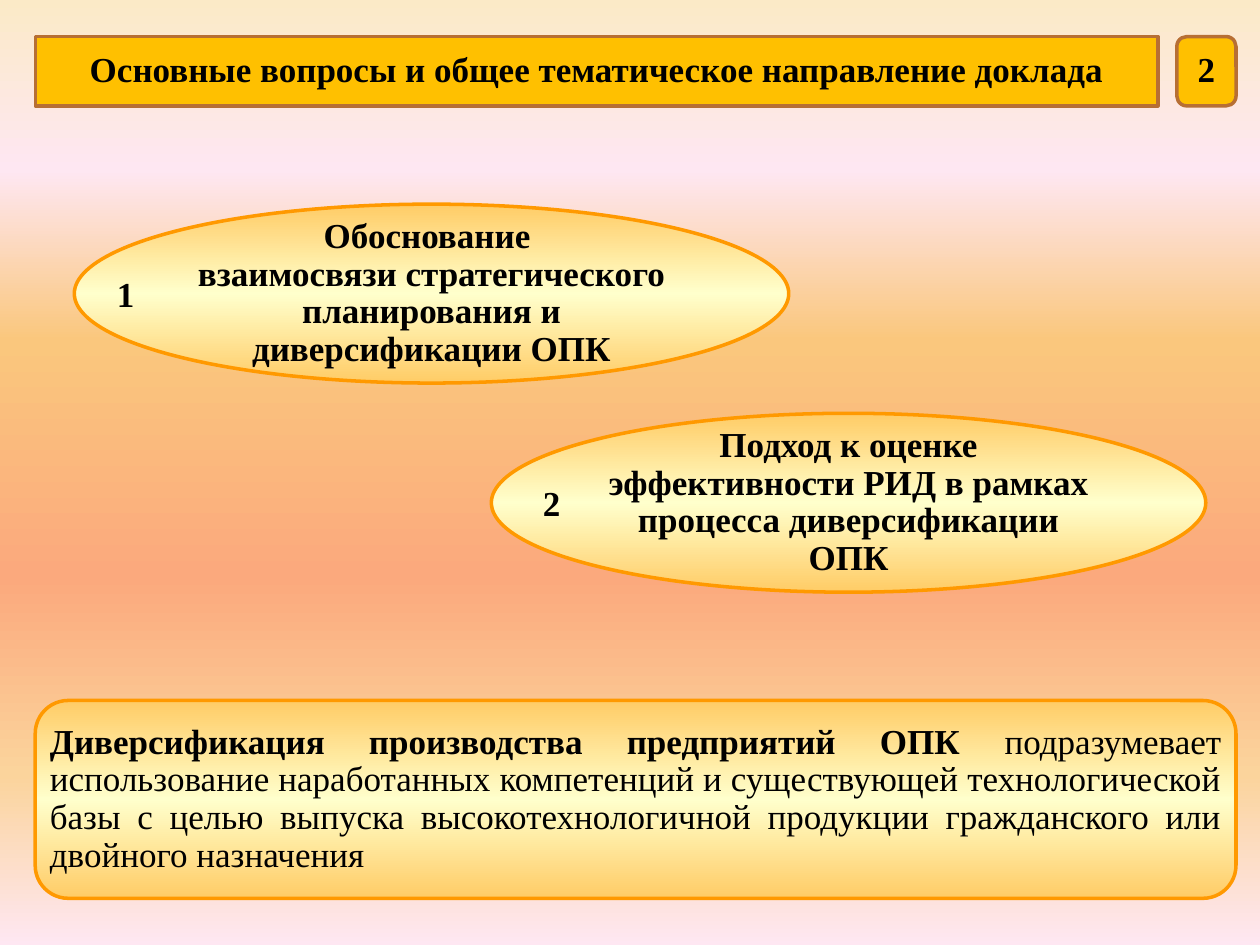
from lxml.etree import SubElement
from pptx import Presentation
from pptx.dml.color import RGBColor
from pptx.enum.shapes import MSO_SHAPE
from pptx.enum.text import MSO_ANCHOR, MSO_AUTO_SIZE, PP_ALIGN
from pptx.oxml import parse_xml
from pptx.oxml.ns import nsdecls, qn
from pptx.util import Inches, Pt

BLACK = RGBColor(0x00, 0x00, 0x00)
GOLD = RGBColor(0xFF, 0xC0, 0x00)
BROWN = RGBColor(0xB7, 0x6F, 0x34)
ORANGE = RGBColor(0xFF, 0x99, 0x00)
AMBER = RGBColor(0xFF, 0xCC, 0x66)
CREAM = RGBColor(0xFF, 0xFF, 0xCC)
SAND = RGBColor(0xFB, 0xEA, 0xC7)
PINK = RGBColor(0xFE, 0xE7, 0xF2)
APRICOT = RGBColor(0xFA, 0xC7, 0x7D)
SALMON = RGBColor(0xFB, 0xA9, 0x7D)
PEACH = RGBColor(0xFB, 0xD4, 0x9C)

SKY = [(0, SAND), (18, PINK), (36, APRICOT), (61, SALMON), (82, PEACH), (100, PINK)]
GLOW = [(0, AMBER), (50, CREAM), (100, AMBER)]

TITLE = "Основные вопросы и общее тематическое направление доклада"
PAGE = "2"
# number, its left edge, ellipse left and top, lines of the topic
TOPICS = [
    ("1", 0.83, 0.59, 1.62,
     ["Обоснование ", "взаимосвязи стратегического планирования и диверсификации ОПК"]),
    ("2", 4.21, 3.9, 3.28,
     ["Подход к оценке эффективности РИД в рамках процесса диверсификации ОПК"]),
]
TERM = "Диверсификация производства предприятий ОПК"
DEFINITION = (" подразумевает использование наработанных компетенций и существующей "
              "технологической базы с целью выпуска высокотехнологичной продукции "
              "гражданского или двойного назначения")

MARGIN, CONTENT_W = 0.28, 9.53
HEAD_TOP, HEAD_H, PAGE_W, HEAD_GAP = 0.29, 0.55, 0.47, 0.15
TITLE_W = CONTENT_W - PAGE_W - HEAD_GAP
OVAL_W, OVAL_H = 5.67, 1.42
NUM_W, NUM_H = 0.47, 0.44


def set_gradient(fill, owner, stops):
    """Fill top to bottom; owner is the element that holds the fill."""
    fill.gradient()
    fill.gradient_angle = 270
    gs_list = owner.find(".//" + qn("a:gsLst"))
    gs_list.clear()
    for pos, color in stops:
        gs = SubElement(gs_list, qn("a:gs"), pos=str(pos * 1000))
        SubElement(gs, qn("a:srgbClr"), val=str(color))


def add_run(p, text, bold=True):
    r = p.add_run()
    r.text = text
    r.font.name, r.font.size, r.font.bold = "Times New Roman", Pt(20), bold
    r.font.color.rgb = BLACK


def style_panel(sp, line_color, align=PP_ALIGN.CENTER):
    """Outline and text frame shared by all panels; returns the paragraph."""
    sp.line.color.rgb = line_color
    sp.line.width = Pt(2)
    tf = sp.text_frame
    tf.word_wrap = True
    tf.auto_size = MSO_AUTO_SIZE.NONE
    tf.vertical_anchor = MSO_ANCHOR.MIDDLE
    tf.margin_left = tf.margin_right = Inches(0.04)
    tf.margin_top = tf.margin_bottom = Inches(0.05)
    p = tf.paragraphs[0]
    p.alignment = align
    p.line_spacing = 0.9
    return p


def add_panel(s, kind, *box):
    sp = s.shapes.add_shape(kind, *map(Inches, box))
    sp.shadow.inherit = False
    return sp


def add_heading(s):
    title = s.shapes.title
    title.left, title.top = Inches(MARGIN), Inches(HEAD_TOP)
    title.width, title.height = Inches(TITLE_W), Inches(HEAD_H)
    title.element.spPr.find(qn("a:xfrm")).addnext(parse_xml(
        f'<a:prstGeom {nsdecls("a")} prst="roundRect"><a:avLst/></a:prstGeom>'))
    page = add_panel(s, MSO_SHAPE.ROUNDED_RECTANGLE,
                     MARGIN + CONTENT_W - PAGE_W, HEAD_TOP, PAGE_W, HEAD_H)
    for sp, text in ((title, TITLE), (page, PAGE)):
        sp.fill.solid()
        sp.fill.fore_color.rgb = GOLD
        add_run(style_panel(sp, BROWN), text)


def add_topic(s, number, num_left, left, top, lines):
    sp = add_panel(s, MSO_SHAPE.OVAL, left, top, OVAL_W, OVAL_H)
    set_gradient(sp.fill, sp.element, GLOW)
    p = style_panel(sp, ORANGE)
    for i, line in enumerate(lines):
        if i:
            p.add_line_break()
        add_run(p, line)
    num_top = top + (OVAL_H - NUM_H) / 2
    box = s.shapes.add_textbox(*map(Inches, (num_left, num_top, NUM_W, NUM_H)))
    box.text_frame.word_wrap = True
    add_run(box.text_frame.paragraphs[0], number)


def add_definition(s):
    sp = add_panel(s, MSO_SHAPE.ROUNDED_RECTANGLE, MARGIN, 5.56, CONTENT_W, 1.57)
    set_gradient(sp.fill, sp.element, GLOW)
    p = style_panel(sp, ORANGE, PP_ALIGN.JUSTIFY)
    add_run(p, TERM)
    add_run(p, DEFINITION, bold=False)


def main():
    prs = Presentation()
    prs.slide_width, prs.slide_height = Inches(10), Inches(7.5)
    s = prs.slides.add_slide(prs.slide_layouts[5])
    set_gradient(s.background.fill, s.element, SKY)
    add_heading(s)
    for topic in TOPICS:
        add_topic(s, *topic)
    add_definition(s)
    prs.save("out.pptx")


if __name__ == "__main__":
    main()
